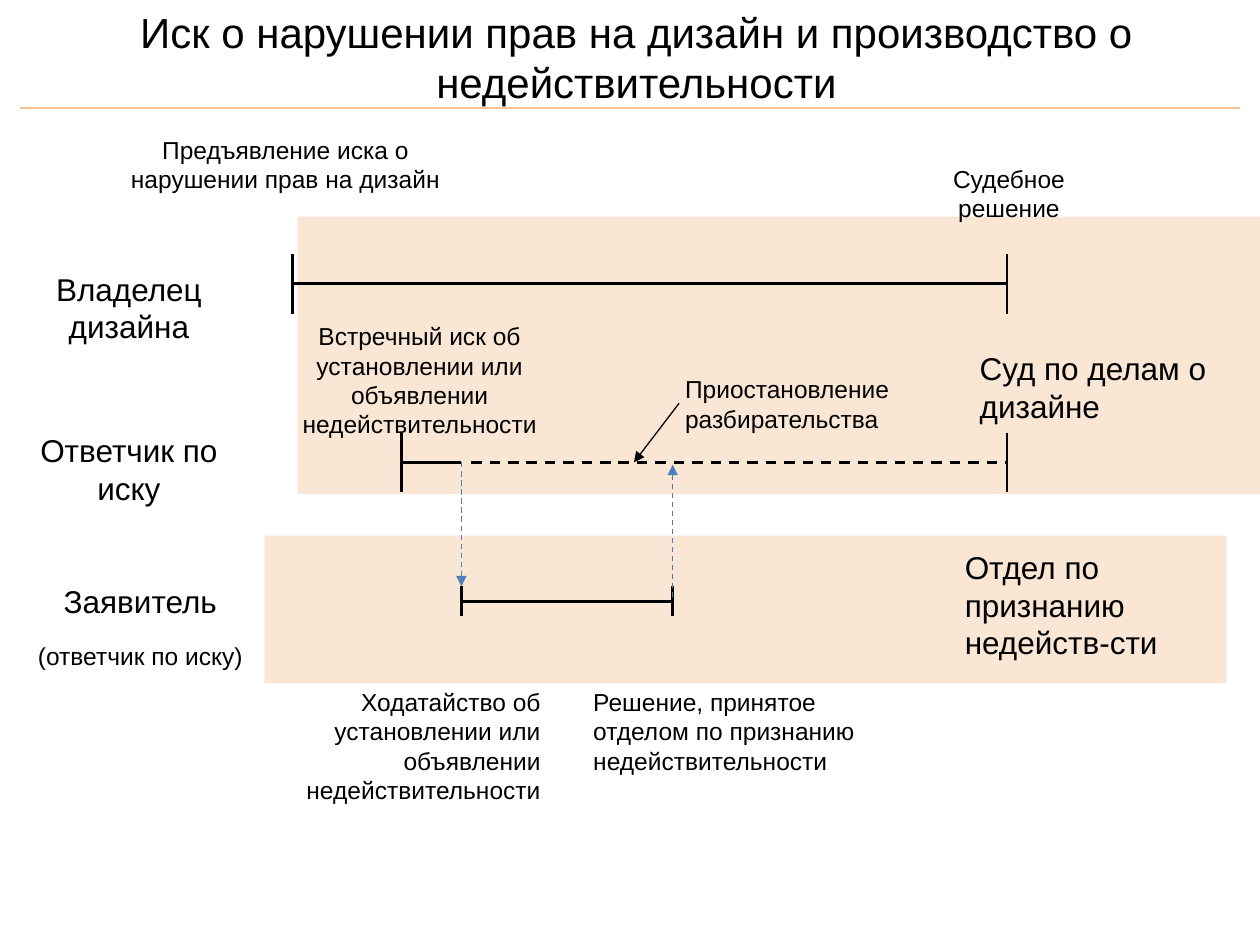
import pptx
import pptx.dml.color
import pptx.enum.dml
import pptx.enum.shapes
import pptx.enum.text
import pptx.oxml.ns
import pptx.util
from lxml import etree

Cm, Pt = pptx.util.Cm, pptx.util.Pt
ALIGN = pptx.enum.text.PP_ALIGN
BLACK, BLUE, ORANGE, PEACH = "000000", "4B7EBC", "E46C0A", "FAC090"


def color(hex_code):
    """Turn a hex string into a colour."""
    return pptx.dml.color.RGBColor.from_string(hex_code)


def write(tf, text, size=14, align=ALIGN.LEFT, before=0, new=False):
    """Write one formatted paragraph into a text frame."""
    tf.word_wrap = True
    tf.auto_size = pptx.enum.text.MSO_AUTO_SIZE.NONE
    tf.vertical_anchor = pptx.enum.text.MSO_ANCHOR.TOP
    p = tf.add_paragraph() if new else tf.paragraphs[0]
    p.alignment = align
    p.space_before = Pt(before)
    r = p.add_run()
    r.text = text
    r.font.name = "Arial"
    r.font.size = Pt(size)
    r.font.color.rgb = color(BLACK)


def add_label(s, x, y, w, h, text, **style):
    """Add a text box and return its text frame."""
    tf = s.shapes.add_textbox(Cm(x), Cm(y), Cm(w), Cm(h)).text_frame
    write(tf, text, **style)
    return tf


def add_line(s, x1, y1, x2, y2, line=BLACK, width=1.5, dashed=False, arrow=False):
    """Add a straight line, dashed or with an arrowhead if asked."""
    sp = s.shapes.add_connector(pptx.enum.shapes.MSO_CONNECTOR.STRAIGHT,
                                Cm(x1), Cm(y1), Cm(x2), Cm(y2))
    sp.line.color.rgb = color(line)
    sp.line.width = Pt(width)
    if dashed:
        sp.line.dash_style = pptx.enum.dml.MSO_LINE.DASH
    qn = pptx.oxml.ns.qn
    if arrow:
        etree.SubElement(sp.line._get_or_add_ln(), qn("a:tailEnd"), type="triangle")
    etree.SubElement(sp._element.spPr, qn("a:effectLst"))


def add_ticks(s, xs, y, half):
    """Add vertical end marks of a time line."""
    for x in xs:
        add_line(s, x, y - half, x, y + half)


def add_band(s, x, y, w, h):
    """Add a translucent background band."""
    sp = s.shapes.add_shape(pptx.enum.shapes.MSO_SHAPE.RECTANGLE,
                            Cm(x), Cm(y), Cm(w), Cm(h))
    sp.shadow.inherit = False
    sp.line.fill.background()
    sp.fill.solid()
    sp.fill.fore_color.rgb = color(ORANGE)
    qn = pptx.oxml.ns.qn
    rgb = sp._element.spPr.find(".//" + qn("a:srgbClr"))
    etree.SubElement(rgb, qn("a:alpha"), val="17000")


def add_heading(s, x, y, w, h):
    """Place the title with its rule below."""
    sp = s.shapes.title
    sp.left, sp.top, sp.width, sp.height = Cm(x + 0.23), Cm(y), Cm(w - 0.2), Cm(h)
    write(sp.text_frame, "Иск о нарушении прав на дизайн и производство о недействительности",
          size=24, align=ALIGN.CENTER)
    add_line(s, x, y + 2.18, x + w, y + 2.18, line=PEACH)


def add_court(s, x, y, w, h):
    """Draw the court band with the owner's and the defendant's time lines."""
    add_band(s, x, y, w, h)
    start, claim, stay, end = x - 0.1, x + 2.1, x + 3.3, x + 14.3
    owner_y, defendant_y = y + 1.35, y + 4.95
    add_line(s, start, owner_y, end, owner_y)
    add_ticks(s, (start, end), owner_y, 0.6)
    add_line(s, claim, defendant_y, stay, defendant_y)
    add_line(s, stay + 0.2, defendant_y, end, defendant_y, dashed=True)
    add_ticks(s, (claim, end), defendant_y, 0.6)
    add_line(s, x + 7.69, y + 3.76, x + 6.78, defendant_y, width=0.75, arrow=True)
    add_label(s, x - 3.61, y - 1.78, 6.73, 2.06,
              "Предъявление иска о нарушении прав на дизайн", align=ALIGN.CENTER)
    add_label(s, x + 12.64, y - 1.19, 3.4, 1.45, "Судебное решение", align=ALIGN.CENTER)
    add_label(s, x - 0.84, y + 1.98, 6.6, 2.64,
              "Встречный иск об установлении или объявлении недействительности",
              align=ALIGN.CENTER)
    add_label(s, x + 7.56, y + 3.05, 4.9, 1.45, "Приостановление разбирательства")
    add_label(s, x + 13.5, y + 2.54, 6.2, 1.8, "Суд по делам о дизайне", size=18)


def add_office(s, x, y, w, h):
    """Draw the invalidity division band, its time line and links to the court."""
    add_band(s, x, y, w, h)
    start, end, line_y = x + 3.97, x + 8.23, y + 1.32
    add_line(s, start, line_y, end, line_y)
    add_ticks(s, (start, end), line_y, 0.3)
    link = dict(line=BLUE, width=0.75, dashed=True, arrow=True)
    add_line(s, start, y - 1.48, start, line_y - 0.3, **link)
    add_line(s, end, line_y - 0.08, end, y - 1.43, **link)
    add_label(s, x + 13.87, y + 0.12, 6.2, 2.57, "Отдел по признанию недейств-сти", size=18)
    add_label(s, x - 0.58, y + 2.92, 6.4, 2.64,
              "Ходатайство об установлении или объявлении недействительности",
              align=ALIGN.RIGHT)
    add_label(s, x + 6.38, y + 2.92, 6.4, 2.06,
              "Решение, принятое отделом по признанию недействительности")


def add_parties(s, x, y, w):
    """Place the names of the parties down the left side."""
    style = dict(size=18, align=ALIGN.CENTER)
    add_label(s, x, y, w, 1.8, "Владелец дизайна", **style)
    add_label(s, x, y + 3.25, w, 1.8, "Ответчик по иску", **style)
    tf = add_label(s, x + 0.28, y + 6.3, w - 0.1, 2.06, "Заявитель", **style)
    write(tf, "(ответчик по иску)", align=ALIGN.CENTER, before=12, new=True)


def main():
    """Build and save the slide."""
    prs = pptx.Presentation()
    prs.slide_width, prs.slide_height = Cm(25.4), Cm(19.05)
    s = prs.slides.add_slide(prs.slide_layouts[5])
    add_heading(s, 0.4, 0, 24.6, 2.31)
    add_court(s, 6, 4.37, 19.4, 5.59)
    add_office(s, 5.33, 10.8, 19.4, 2.97)
    add_parties(s, 0.1, 5.31, 5)
    prs.save("out.pptx")


if __name__ == "__main__":
    main()
